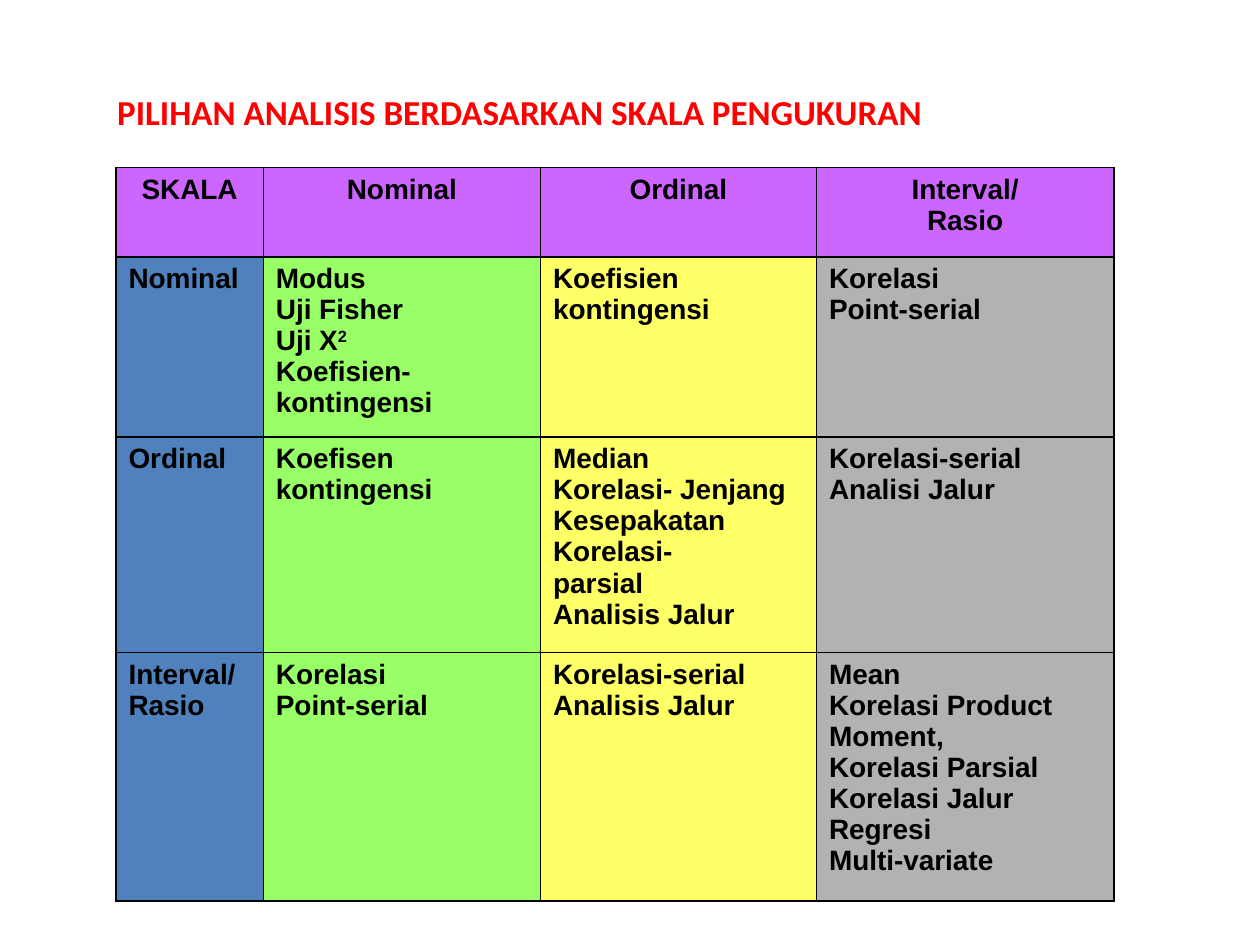
import pptx
import pptx.util
import pptx.dml.color
import pptx.enum.text
import pptx.oxml
import pptx.oxml.ns

Pt = pptx.util.Pt
ALIGN = pptx.enum.text.PP_ALIGN
ANCHOR = pptx.enum.text.MSO_ANCHOR

HEAD = "CC66FF"
FILLS = ["4F81BD", "99FF66", "FFFF66", "B2B2B2"]  # one per column
WIDTHS = [84.24, 158.4, 157.68, 169.92]
HEIGHTS = [51.12, 102.96, 123.12, 141.84]

# Each line is a paragraph; "^" starts a superscript
ROWS = [
    ["SKALA", "Nominal", "Ordinal", "Interval/\nRasio"],
    ["Nominal",
     "Modus\nUji Fisher\nUji X^2\nKoefisien- kontingensi",
     "Koefisien\nkontingensi",
     "Korelasi\nPoint-serial"],
    ["Ordinal",
     "Koefisen\nkontingensi",
     "Median\nKorelasi- Jenjang\nKesepakatan\nKorelasi-\nparsial\nAnalisis Jalur",
     "Korelasi-serial\nAnalisi Jalur"],
    ["Interval/\nRasio",
     "Korelasi\nPoint-serial",
     "Korelasi-serial\nAnalisis Jalur",
     "Mean\nKorelasi Product Moment,\nKorelasi Parsial\nKorelasi Jalur\n"
     "Regresi\nMulti-variate"],
]


def color(code):
    return pptx.dml.color.RGBColor.from_string(code)


def style(para, name, size, code, align):
    para.alignment = align
    para.font.name = name
    para.font.size = Pt(size)
    para.font.bold = True
    para.font.color.rgb = color(code)


def border(cell, code="000000", width=1):
    props = cell._tc.get_or_add_tcPr()
    for side in "LRTB":
        props.append(pptx.oxml.parse_xml(
            f'<a:ln{side} {pptx.oxml.ns.nsdecls("a")} w="{Pt(width)}">'
            f'<a:solidFill><a:srgbClr val="{code}"/></a:solidFill></a:ln{side}>'))


def fill_cell(cell, text, code, align):
    border(cell)
    cell.fill.solid()
    cell.fill.fore_color.rgb = color(code)
    frame = cell.text_frame
    for i, line in enumerate(text.split("\n")):
        para = frame.add_paragraph() if i else frame.paragraphs[0]
        base, _, power = line.partition("^")
        para.add_run().text = base
        if power:
            run = para.add_run()
            run.text = power
            run.font._element.set("baseline", "30000")
        style(para, "Arial", 16, "000000", align)


def add_title(slide, text):
    title = slide.shapes.title
    title.left, title.top = Pt(59.76), Pt(48.24)
    title.width, title.height = Pt(580.32), Pt(31)
    frame = title.text_frame
    frame.text = text
    frame.word_wrap = True
    frame.vertical_anchor = ANCHOR.TOP
    style(frame.paragraphs[0], "Calibri", 20, "FF0000", ALIGN.LEFT)


def add_grid(slide):
    table = slide.shapes.add_table(
        len(ROWS), len(WIDTHS), Pt(66.24), Pt(95.76),
        Pt(sum(WIDTHS)), Pt(sum(HEIGHTS))).table
    table.first_row = table.horz_banding = False
    for col, width in zip(table.columns, WIDTHS):
        col.width = Pt(width)
    for row, height in zip(table.rows, HEIGHTS):
        row.height = Pt(height)
    for r, texts in enumerate(ROWS):
        for c, text in enumerate(texts):
            if r == 0:
                code, align = HEAD, ALIGN.CENTER
            else:
                code = FILLS[c]
                align = ALIGN.LEFT if c else ALIGN.JUSTIFY
            fill_cell(table.cell(r, c), text, code, align)


def main():
    deck = pptx.Presentation()
    deck.slide_width, deck.slide_height = Pt(720), Pt(540)
    slide = deck.slides.add_slide(deck.slide_layouts[5])  # title only
    add_grid(slide)
    add_title(slide, "PILIHAN ANALISIS BERDASARKAN SKALA PENGUKURAN")
    deck.save("out.pptx")


if __name__ == "__main__":
    main()
